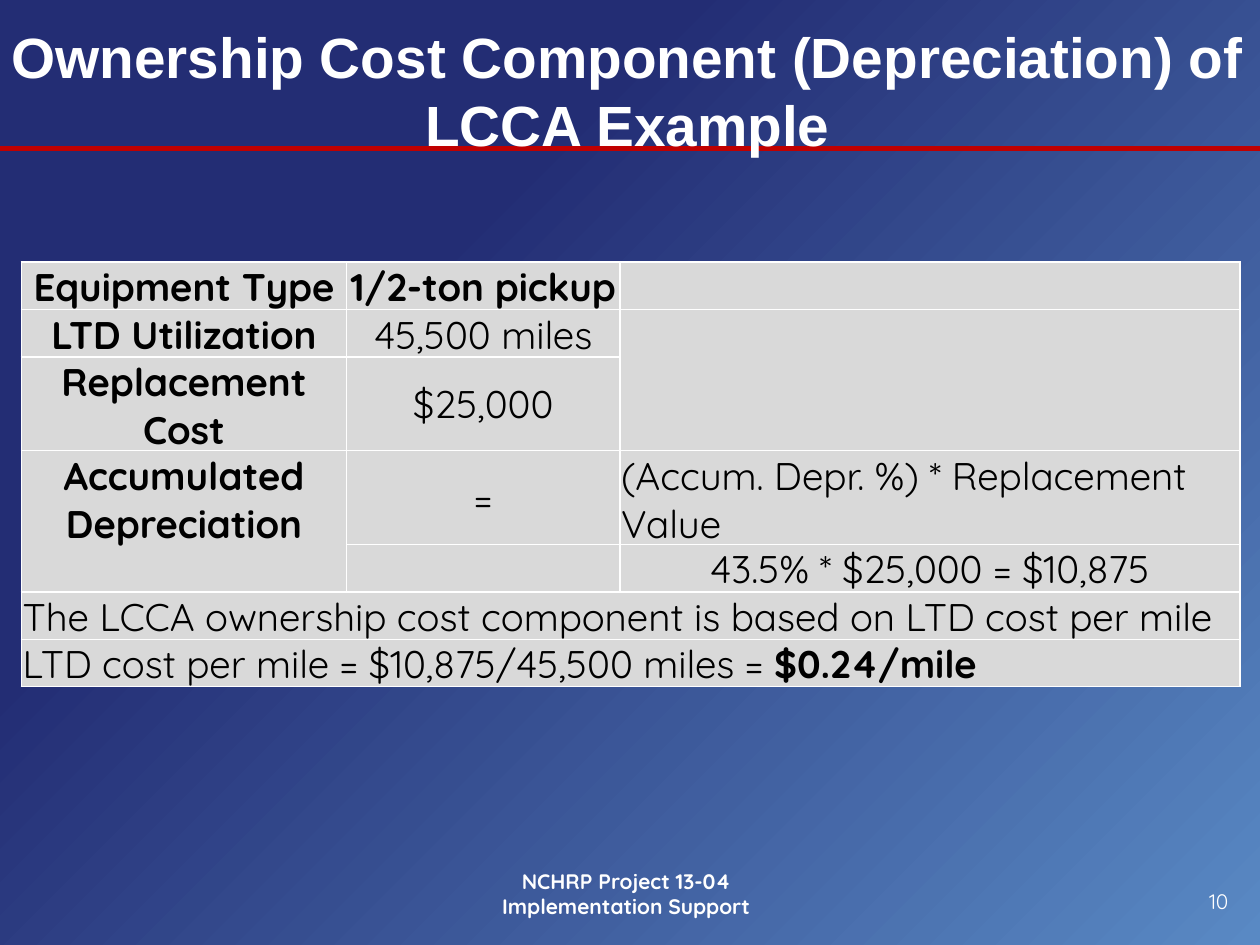
"""Build the slide on the ownership cost component of a life-cycle cost example."""
from lxml import etree
from pptx import Presentation
from pptx.dml.color import RGBColor
from pptx.enum import shapes, text
from pptx.oxml import parse_xml
from pptx.oxml.ns import nsdecls, qn
from pptx.util import Inches, Pt

COLORS = {"light": "5989C4", "navy": "232D74", "red": "C00000",
          "white": "FFFFFF", "black": "000000", "cell": "D9D9D9"}
LEFT, CENTER, RIGHT = text.PP_ALIGN.LEFT, text.PP_ALIGN.CENTER, text.PP_ALIGN.RIGHT
MIDDLE, BOTTOM = text.MSO_ANCHOR.MIDDLE, text.MSO_ANCHOR.BOTTOM


def style(paragraph, size, color, bold, align, face="Quicksand"):
    paragraph.alignment = align
    paragraph.font.size = Pt(size)
    paragraph.font.name = face
    paragraph.font.bold = bold
    paragraph.font.color.rgb = RGBColor.from_string(COLORS[color])


def add_label(slide, box, wording, size, bold, align, face="Quicksand"):
    frame = slide.shapes.add_textbox(*map(Inches, box)).text_frame
    frame.word_wrap = True
    frame.vertical_anchor = MIDDLE
    frame.margin_left = frame.margin_right = Inches(0.08)
    frame.text = wording
    style(frame.paragraphs[0], size, "white", bold, align, face)


deck = Presentation()
deck.slide_width, deck.slide_height = Inches(10), Inches(7.5)
slide = deck.slides.add_slide(deck.slide_layouts[6])

slide.background.fill.gradient()
gradient = slide._element.find(".//" + qn("a:gradFill"))
stops = "".join(f'<a:gs pos="{pos}"><a:srgbClr val="{COLORS[name]}"/></a:gs>'
                for pos, name in ((0, "light"), (69000, "navy")))
gradient.getparent().replace(gradient, parse_xml(
    f'<a:gradFill {nsdecls("a")} rotWithShape="1"><a:gsLst>{stops}</a:gsLst>'
    '<a:path path="circle"><a:fillToRect l="100000" t="100000"/></a:path></a:gradFill>'))

rule = slide.shapes.add_connector(
    shapes.MSO_CONNECTOR.STRAIGHT, Inches(10), Inches(1.18), Inches(0), Inches(1.18))
rule.line.color.rgb = RGBColor.from_string(COLORS["red"])
rule.line.width = Pt(3)
etree.SubElement(rule._element.spPr, qn("a:effectLst"))

add_label(slide, (-0.02, 0.13, 10, 1.17),
          "Ownership Cost Component (Depreciation) of LCCA Example", 32.4, True, CENTER, "Arial")
add_label(slide, (7.58, 6.95, 2.25, 0.4), "10", 12, False, RIGHT)
add_label(slide, (3.42, 6.83, 3.1, 0.52),
          "NCHRP Project 13-04 Implementation Support", 12, True, CENTER)

column_widths = (2.58, 2.17, 4.92)
row_height, row_count = 0.33, 7
costs = slide.shapes.add_table(
    row_count, len(column_widths), Inches(0.17), Inches(2.08),
    Inches(sum(column_widths)), Inches(row_height * row_count)).table
costs.first_row = costs.horz_banding = False
for column, width in zip(costs.columns, column_widths):
    column.width = Inches(width)

for cell in costs.iter_cells():
    properties = cell._tc.get_or_add_tcPr()
    for side in ("lnL", "lnR", "lnT", "lnB"):
        properties.append(parse_xml(
            f'<a:{side} {nsdecls("a")} w="12700"><a:solidFill>'
            f'<a:srgbClr val="{COLORS["white"]}"/></a:solidFill></a:{side}>'))
    cell.fill.solid()
    cell.fill.fore_color.rgb = RGBColor.from_string(COLORS["cell"])
    cell.margin_left = cell.margin_right = cell.margin_top = Inches(0.01)
    cell.margin_bottom = 0
    cell.vertical_anchor = MIDDLE

for first, last in (((1, 2), (2, 2)), ((3, 0), (4, 0)), ((5, 0), (5, 2)), ((6, 0), (6, 2))):
    costs.cell(*first).merge(costs.cell(*last))

entries = [
    (0, 0, "Equipment Type", True, CENTER),
    (0, 1, "1/2-ton pickup", True, CENTER),
    (1, 0, "LTD Utilization", True, CENTER),
    (1, 1, "45,500 miles", False, CENTER),
    (2, 0, "Replacement Cost", True, CENTER),
    (2, 1, "$25,000", False, CENTER),
    (3, 0, "Accumulated Depreciation\n\u00a0", True, CENTER),
    (3, 1, "=", False, CENTER),
    (3, 2, "(Accum. Depr. %) * Replacement Value", False, LEFT),
    (4, 2, "43.5% * $25,000 = $10,875", False, CENTER),
    (5, 0, "The LCCA ownership cost component is based on LTD cost per mile", False, LEFT),
    (6, 0, "LTD cost per mile = $10,875/45,500 miles = ", False, LEFT),
]
for row, column, wording, bold, align in entries:
    cell = costs.cell(row, column)
    cell.text = wording
    for paragraph in cell.text_frame.paragraphs:
        style(paragraph, 22, "black", bold, align)
costs.cell(4, 2).vertical_anchor = BOTTOM
unit_cost = costs.cell(6, 0).text_frame.paragraphs[0].add_run()
unit_cost.text = "$0.24/mile"
unit_cost.font.bold = True

deck.save("out.pptx")
